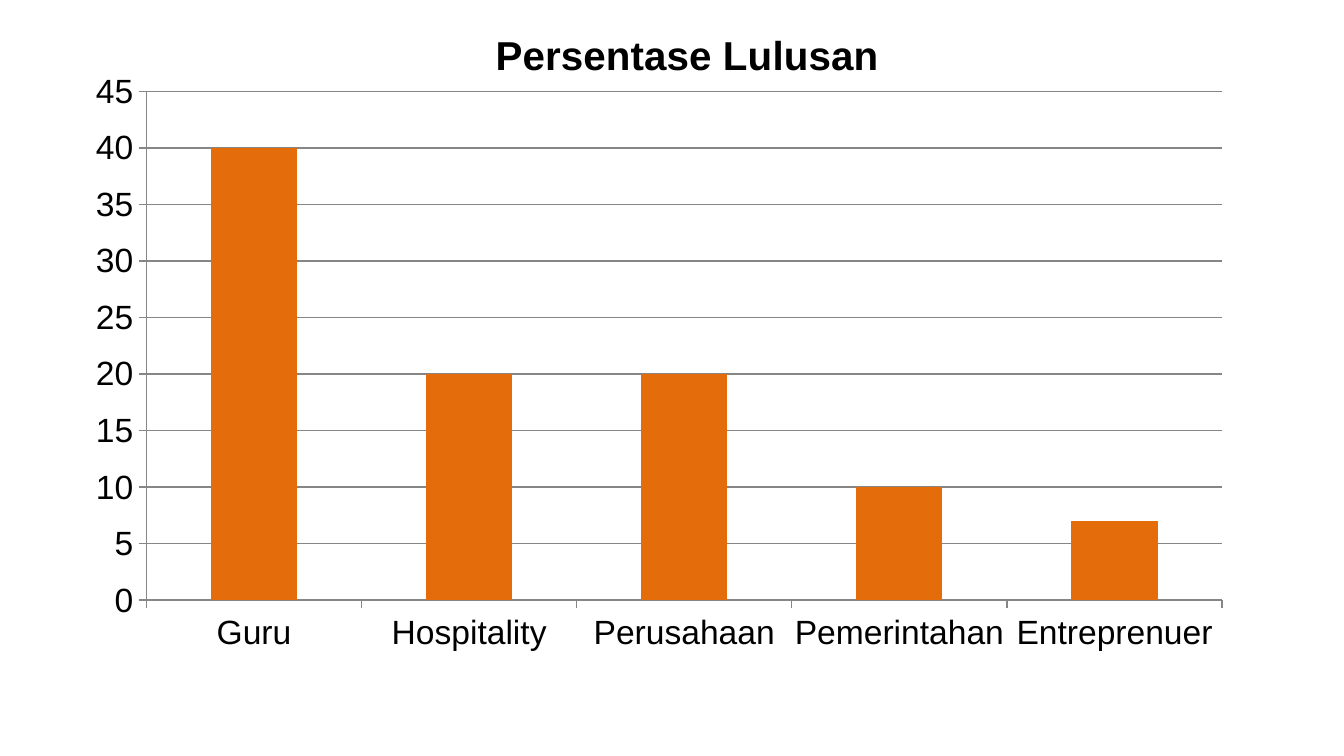
from dataclasses import dataclass

from lxml import etree
from pptx import Presentation
from pptx.chart import data as chart_data
from pptx.dml.color import RGBColor
from pptx.enum import chart as chart_enum
from pptx.oxml import ns
from pptx.util import Inches, Pt


@dataclass(frozen=True)
class Theme:
    """Fonts, sizes and colours of the deck."""
    font: str = "Arial"
    label_size: float = 18
    title_size: float = 21.6
    ink: RGBColor = RGBColor(0x00, 0x00, 0x00)
    rule: RGBColor = RGBColor(0x86, 0x86, 0x86)
    bar: RGBColor = RGBColor(0xE4, 0x6C, 0x0A)


THEME = Theme()
TITLE = "Persentase Lulusan"
GRADUATES = {
    "Guru": 40,
    "Hospitality": 20,
    "Perusahaan": 20,
    "Pemerintahan": 10,
    "Entreprenuer": 7,
}


def style_font(font, size, bold=False):
    """Apply the theme's typeface and ink to a font."""
    font.name = THEME.font
    font.size = Pt(size)
    font.bold = bold
    font.color.rgb = THEME.ink


def style_line(line):
    """Draw a line as a thin grey rule."""
    line.color.rgb = THEME.rule
    line.width = Pt(0.75)


def place_plot(chart, x, y, w, h):
    """Fix the inner plot area as fractions of the chart."""
    plot_area = chart.element.find(".//" + ns.qn("c:plotArea"))
    for layout in plot_area.findall(ns.qn("c:layout")):
        plot_area.remove(layout)
    layout = etree.Element(ns.qn("c:layout"))
    manual = etree.SubElement(layout, ns.qn("c:manualLayout"))
    settings = {"layoutTarget": "inner", "xMode": "edge", "yMode": "edge",
                "x": x, "y": y, "w": w, "h": h}
    for name, value in settings.items():
        etree.SubElement(manual, ns.qn(f"c:{name}"), val=str(value))
    plot_area.insert(0, layout)


def add_graduate_chart(page, left, top, width, height):
    """Add the column chart of graduates by occupation."""
    values = chart_data.CategoryChartData()
    values.categories = list(GRADUATES)
    values.add_series(TITLE, list(GRADUATES.values()))
    chart = page.shapes.add_chart(
        chart_enum.XL_CHART_TYPE.COLUMN_CLUSTERED,
        left, top, width, height, values).chart

    style_font(chart.font, THEME.label_size)
    chart.has_legend = False
    chart.has_title = True
    chart.chart_title.include_in_layout = False
    para = chart.chart_title.text_frame.paragraphs[0]
    para.text = TITLE
    style_font(para.font, THEME.title_size, bold=True)

    plot = chart.plots[0]
    plot.vary_by_categories = False
    plot.gap_width = 150
    fill = plot.series[0].format.fill
    fill.solid()
    fill.fore_color.rgb = THEME.bar

    for axis in (chart.category_axis, chart.value_axis):
        axis.major_tick_mark = chart_enum.XL_TICK_MARK.OUTSIDE
        axis.minor_tick_mark = chart_enum.XL_TICK_MARK.NONE
        style_line(axis.format.line)
    scale = chart.value_axis
    scale.minimum_scale, scale.maximum_scale, scale.major_unit = 0, 45, 5
    scale.has_major_gridlines = True
    style_line(scale.major_gridlines.format.line)
    place_plot(chart, 0.063, 0.121, 0.869, 0.673)


def main():
    """Build and save a widescreen deck with one chart page."""
    deck = Presentation()
    deck.slide_width = Inches(10)
    deck.slide_height = deck.slide_width * 9 // 16
    page = deck.slides.add_slide(deck.slide_layouts[6])
    add_graduate_chart(page, Inches(0.51), Inches(0), Inches(9.21),
                       deck.slide_height)
    deck.save("out.pptx")


if __name__ == "__main__":
    main()
